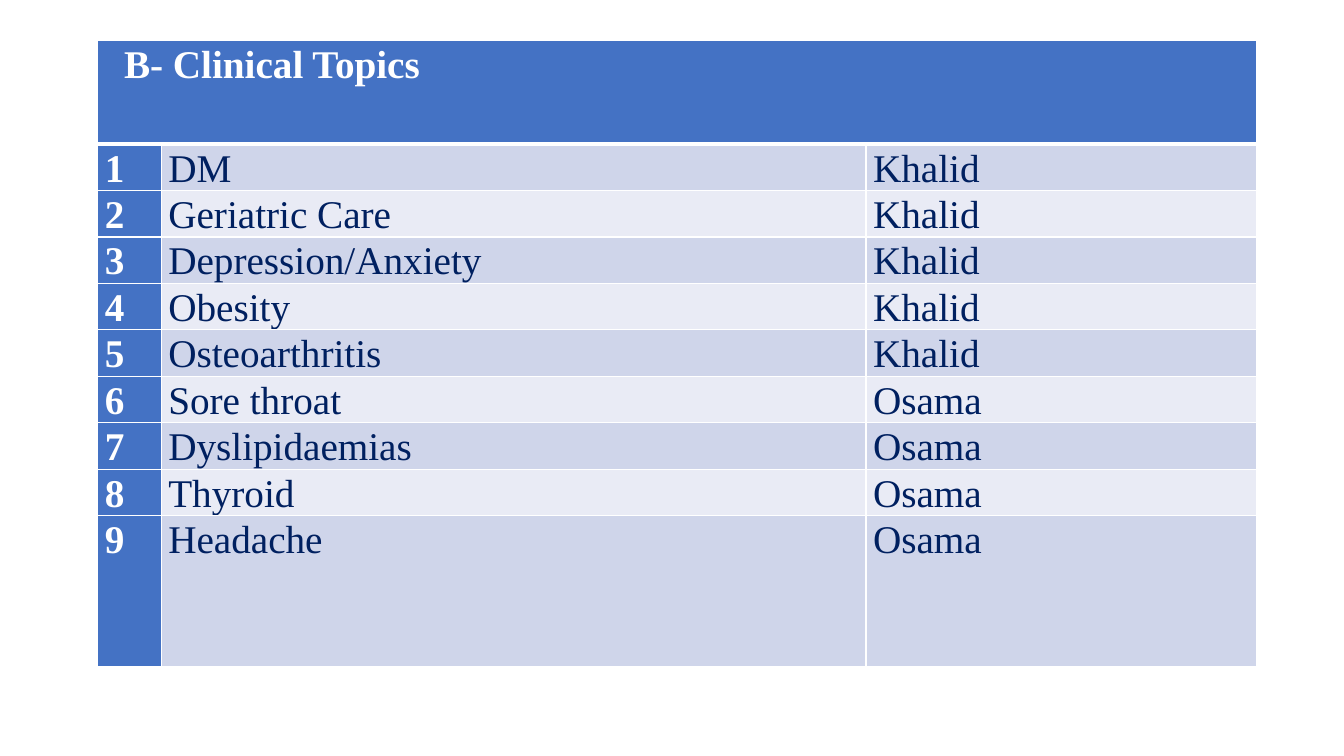
"""Build the slide that lists clinical topics and their presenters."""
from typing import NamedTuple

from lxml.etree import SubElement
from pptx import Presentation
from pptx.dml.color import RGBColor
from pptx.oxml.ns import qn
from pptx.util import Inches, Pt

WHITE = RGBColor(0xFF, 0xFF, 0xFF)
NAVY = RGBColor(0x00, 0x20, 0x60)
BLUE = RGBColor(0x44, 0x72, 0xC4)
BANDS = (RGBColor(0xCF, 0xD5, 0xEA), RGBColor(0xE9, 0xEB, 0xF5))
WIDTHS = (0.63, 6.99, 3.87)
HEAD, ROW, LAST = 1.03, 0.46, 1.5
INSET, INDENT = 0.07, 0.19


class Topic(NamedTuple):
    name: str
    host: str


TOPICS = (
    Topic("DM", "Khalid"),
    Topic("Geriatric Care", "Khalid"),
    Topic("Depression/Anxiety", "Khalid"),
    Topic("Obesity", "Khalid"),
    Topic("Osteoarthritis", "Khalid"),
    Topic("Sore throat", "Osama"),
    Topic("Dyslipidaemias", "Osama"),
    Topic("Thyroid", "Osama"),
    Topic("Headache", "Osama"),
)


def edge(cell, side: str, width: float) -> None:
    """Draw one white border of a cell."""
    props = cell._tc.get_or_add_tcPr()
    line = SubElement(props, qn(f"a:ln{side}"), w=str(Pt(width)))
    fill = SubElement(line, qn("a:solidFill"))
    SubElement(fill, qn("a:srgbClr"), val=str(WHITE))


def style(cell, row: int, fill: RGBColor) -> None:
    """Set the borders, fill and margins of a cell."""
    for side in "LRTB":
        thick = (row, side) in ((0, "B"), (1, "T"))
        edge(cell, side, 3 if thick else 1)
    cell.fill.solid()
    cell.fill.fore_color.rgb = fill
    cell.margin_left = cell.margin_right = Inches(INSET)
    cell.margin_top = cell.margin_bottom = 0


def write(cell, text: str, color: RGBColor, bold: bool) -> None:
    """Put formatted text in a cell."""
    cell.text = text
    para = cell.text_frame.paragraphs[0]
    para.line_spacing = 1.07
    para.space_after = Pt(8)
    font = para.font
    font.name = "Times New Roman"
    font.size = Pt(28)
    font.bold = bold
    font.color.rgb = color


def main() -> None:
    """Lay out the table and save the deck."""
    deck = Presentation()
    deck.slide_width, deck.slide_height = Inches(13.33), Inches(7.5)
    slide = deck.slides.add_slide(deck.slide_layouts[6])
    heights = [HEAD] + [ROW] * (len(TOPICS) - 1) + [LAST]
    table = slide.shapes.add_table(
        len(heights), len(WIDTHS), Inches(0.97), Inches(0.4),
        Inches(sum(WIDTHS)), Inches(sum(heights))).table
    table.first_col = True
    for col, width in zip(table.columns, WIDTHS):
        col.width = Inches(width)
    for row, height in zip(table.rows, heights):
        row.height = Inches(height)

    title = table.cell(0, 0)
    title.merge(table.cell(0, len(WIDTHS) - 1))
    for cell in table.rows[0].cells:
        style(cell, 0, BLUE)
    title.margin_left = Inches(INSET + INDENT)
    write(title, "B- Clinical Topics", WHITE, True)

    for num, topic in enumerate(TOPICS, 1):
        band = BANDS[(num - 1) % 2]
        for col, text in enumerate((str(num), *topic)):
            cell = table.cell(num, col)
            lead = col == 0
            style(cell, num, BLUE if lead else band)
            write(cell, text, WHITE if lead else NAVY, lead)

    deck.save("out.pptx")


if __name__ == "__main__":
    main()
